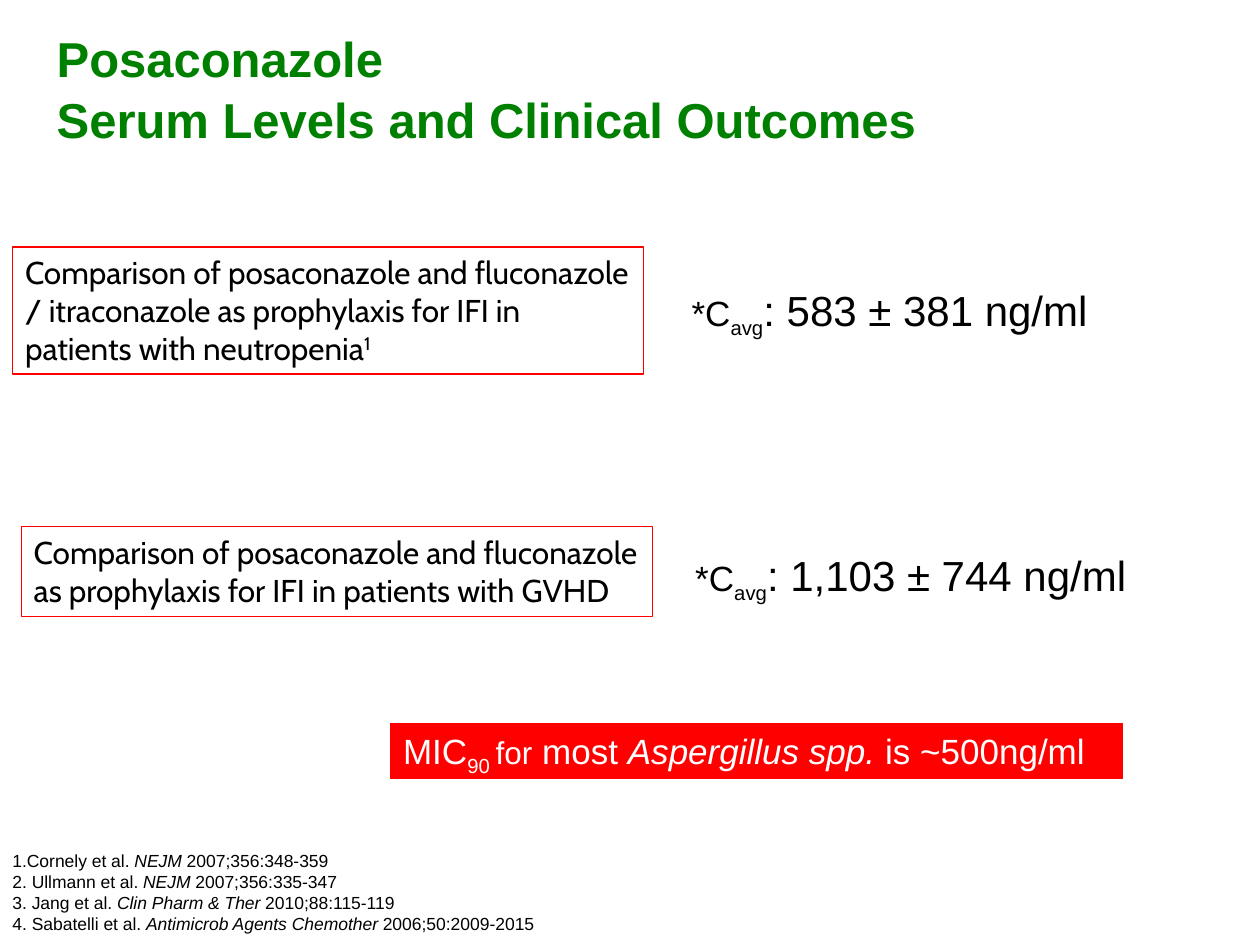
from pptx import Presentation
from pptx.util import Pt
from pptx.dml.color import RGBColor
from pptx.enum import shapes, text

TITLE = ["Posaconazole", "Serum Levels and Clinical Outcomes"]
STUDIES = [
    ((7.2, 141.1, 360.7, 72.7),
     [("Comparison of posaconazole and fluconazole / itraconazole "
       "as prophylaxis for IFI in patients with neutropenia", 18, ""),
      ("1", 18, "sup")]),
    ((12.2, 301, 360.7, 51.1),
     [("Comparison of posaconazole and fluconazole "
       "as prophylaxis for IFI in patients with GVHD", 18, "")]),
]
LEVELS = [
    ((388.1, 159.1, 245.5, 65.5), ": 583 ± 381 ng/ml"),
    ((390.2, 310.3, 265.7, 65.5), ": 1,103 ± 744 ng/ml"),
]
MIC = [("MIC", 20, ""), ("90 ", 20, "sub"), ("for", 18, ""), (" most ", 20, ""),
       ("Aspergillus spp.", 20, "italic"), (" is ~500ng/ml", 20, "")]
REFS = [
    ("1.Cornely et al. ", "NEJM", " 2007;356:348-359"),
    ("2. Ullmann et al. ", "NEJM", " 2007;356:335-347"),
    ("3. Jang et al. ", "Clin Pharm & Ther ", "2010;88:115-119"),
    ("4. Sabatelli et al. ", "Antimicrob Agents Chemother ", "2006;50:2009-2015"),
]
SHIFT = {"sup": "30000", "sub": "-25000"}


def color(code):
    return RGBColor.from_string(code)


def write(frame, lines, face="Arial", ink="000000"):
    frame.word_wrap = True
    frame.vertical_anchor = text.MSO_ANCHOR.TOP
    for i, line in enumerate(lines):
        para = frame.add_paragraph() if i else frame.paragraphs[0]
        para.alignment = text.PP_ALIGN.LEFT
        for words, size, style in line:
            run = para.add_run()
            run.text = words
            font = run.font
            font.name, font.size = face, Pt(size)
            font.color.rgb = color(ink)
            font.bold = style == "bold"
            font.italic = style == "italic"
            if style in SHIFT:
                run._r.get_or_add_rPr().set("baseline", SHIFT[style])


def panel(slide, box, fill=None):
    rect = slide.shapes.add_shape(shapes.MSO_SHAPE.RECTANGLE, *map(Pt, box))
    rect.shadow.inherit = False
    if fill:
        rect.fill.solid()
        rect.fill.fore_color.rgb = color(fill)
    else:
        rect.fill.background()
    rect.line.color.rgb = color("FF0000")
    rect.line.width = Pt(0.75)
    return rect.text_frame


def label(slide, box):
    return slide.shapes.add_textbox(*map(Pt, box)).text_frame


def main():
    deck = Presentation()
    deck.slide_width, deck.slide_height = Pt(720), Pt(540)
    slide = deck.slides.add_slide(deck.slide_layouts[5])

    title = slide.shapes.title
    title.left, title.top, title.width, title.height = map(Pt, (25.2, 10.8, 684.7, 74.9))
    title.fill.solid()
    title.fill.fore_color.rgb = color("FFFFFF")
    write(title.text_frame, [[(line, 28, "bold")] for line in TITLE], ink="008000")
    for para in title.text_frame.paragraphs:
        para.line_spacing = 1.05

    for box, runs in STUDIES:
        write(panel(slide, box), [runs], "Cabin")
    for box, value in LEVELS:
        write(label(slide, box), [[("*C", 20, ""), ("avg", 20, "sub"), (value, 24, "")]])
    write(panel(slide, (223.2, 413.3, 418.3, 31.7), "FF0000"), [MIC], ink="FFFFFF")
    write(label(slide, (0, 482.4, 315.4, 55.4)),
          [[(who, 10, ""), (source, 10, "italic"), (cite, 10, "")]
           for who, source, cite in REFS])
    deck.save("out.pptx")


if __name__ == "__main__":
    main()
